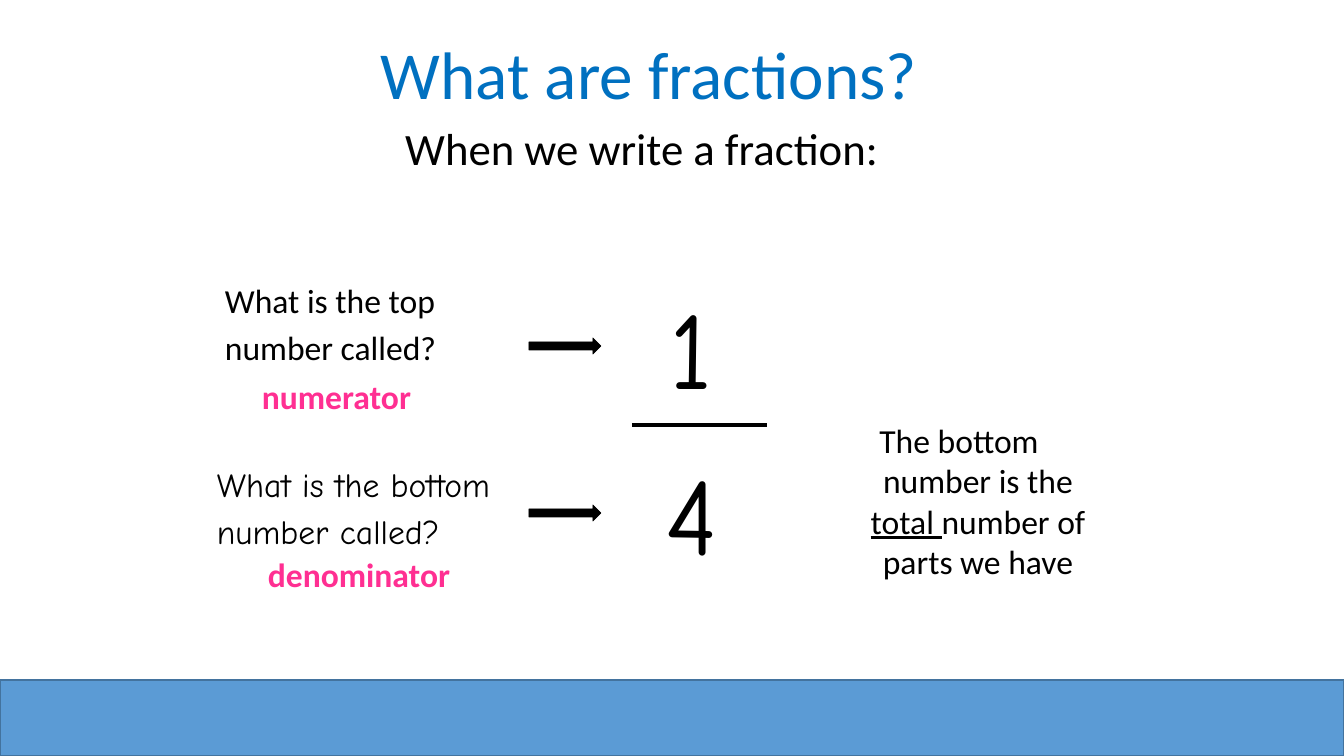
from lxml import etree
from pptx import Presentation
from pptx.dml.color import RGBColor
from pptx.enum.shapes import MSO_CONNECTOR, MSO_SHAPE
from pptx.enum.text import PP_ALIGN
from pptx.oxml.ns import qn
from pptx.util import Pt

LEFT, CENTER = PP_ALIGN.LEFT, PP_ALIGN.CENTER
ARROW, RECT = MSO_SHAPE.RIGHT_ARROW, MSO_SHAPE.RECTANGLE
STRAIGHT = MSO_CONNECTOR.STRAIGHT

PX = 914400 / 100.8
WIDTH, HEIGHT = 1344, 756
BLACK, BLUE, PINK = "000000", "0070C0", "FF2F92"
BAND, BAND_EDGE = "5B9BD5", "43739E"
PLAIN, HAND = "Calibri", "Comic Neue"
HANGING = 38

# box in px, alignment, font, size, colour, bold, paragraphs of (text, underlined) runs
HEADINGS = [
    ((44, 27, 1210, 92), CENTER, PLAIN, 48, BLUE, False,
     [[("What are fractions?", False)]]),
    ((334, 122, 626, 249), CENTER, PLAIN, 32, BLACK, False,
     [[("When we write a fraction: ", False)]]),
]
PARTS = [
    ((560, 275, 262, 158), CENTER, HAND, 78, BLACK, False, [[("1", False)]]),
    ((545, 441, 293, 174), CENTER, HAND, 78, BLACK, False, [[("4", False)]]),
    ((215, 275, 306, 148), LEFT, PLAIN, 24, BLACK, False,
     [[("What is the top", False)], [("number called?", False)]]),
    ((207, 459, 389, 198), LEFT, HAND, 24, BLACK, False,
     [[("What is the bottom", False)], [("number called?", False)]]),
    ((252, 371, 215, 80), LEFT, PLAIN, 24, PINK, True, [[("numerator", False)]]),
    ((258, 549, 222, 100), LEFT, PLAIN, 24, PINK, True, [[("denominator", False)]]),
    ((814, 415, 290, 222), CENTER, PLAIN, 24, BLACK, False,
     [[("The bottom number is the ", False), ("total ", True),
       ("number of parts we have", False)]]),
]
ARROW_TOPS = [338, 505]
BAR = (632, 425, 767, 425)


def px(*lengths):
    return [round(n * PX) for n in lengths]


def color(hex_string):
    return RGBColor.from_string(hex_string)


def add_text(s, box, align, font, size, hex_color, bold, paragraphs, hanging):
    tf = s.shapes.add_textbox(*px(*box)).text_frame
    tf.word_wrap = True
    for i, runs in enumerate(paragraphs):
        p = tf.add_paragraph() if i else tf.paragraphs[0]
        p.alignment = align
        if hanging:
            p.space_before = Pt(size * 0.2)
            pPr = p._p.get_or_add_pPr()
            indent, = px(HANGING)
            pPr.set("marL", str(indent))
            pPr.set("indent", str(-indent))
        for text, underlined in runs:
            r = p.add_run()
            r.text = text
            r.font.name, r.font.size = font, Pt(size)
            r.font.bold, r.font.underline = bold, underlined
            r.font.color.rgb = color(hex_color)
    return tf


def add_shape(s, kind, box, fill, edge, weight):
    sp = s.shapes.add_shape(kind, *px(*box))
    sp.shadow.inherit = False
    sp.fill.solid()
    sp.fill.fore_color.rgb = color(fill)
    sp.line.color.rgb = color(edge)
    sp.line.width = Pt(weight)


def main():
    prs = Presentation()
    prs.slide_width, prs.slide_height = px(WIDTH, HEIGHT)
    s = prs.slides.add_slide(prs.slide_layouts[6])

    for part in PARTS:
        add_text(s, *part, hanging=True)
    for top in ARROW_TOPS:
        add_shape(s, ARROW, (529, top, 72, 16), BLACK, BLACK, 0.5)

    bar = s.shapes.add_connector(STRAIGHT, *px(*BAR))
    bar.line.color.rgb = color(BLACK)
    bar.line.width = Pt(3)
    etree.SubElement(bar._element.spPr, qn("a:effectLst"))

    add_shape(s, RECT, (0, 680, WIDTH, HEIGHT - 680), BAND, BAND_EDGE, 1)
    title, subtitle = [add_text(s, *part, hanging=False) for part in HEADINGS]
    subtitle.paragraphs[0].line_spacing = 0.9

    prs.save("out.pptx")


if __name__ == "__main__":
    main()
